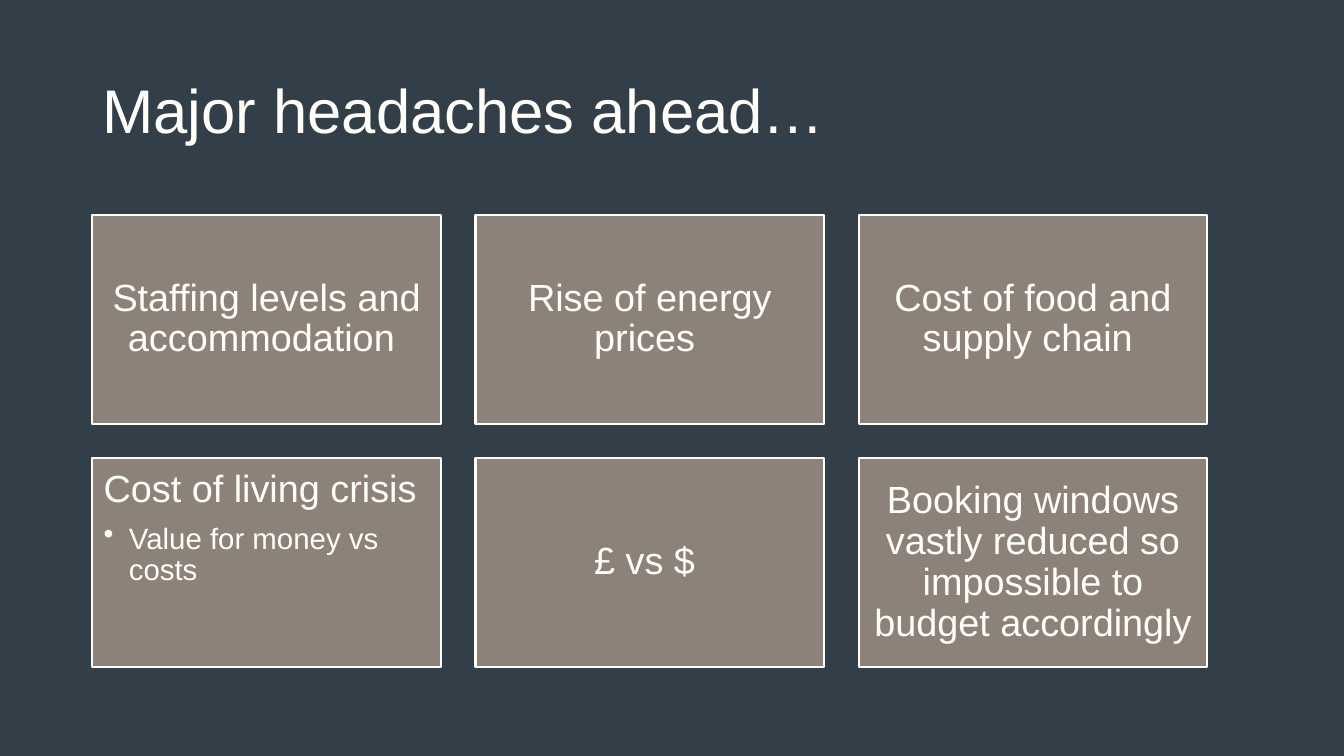
"""Build the slide on major headaches ahead: a title above a grid of six cards."""
from lxml.etree import SubElement
from pptx import Presentation
from pptx.dml.color import RGBColor
from pptx.enum.shapes import MSO_SHAPE
from pptx.enum.text import MSO_ANCHOR, PP_ALIGN
from pptx.oxml.ns import qn
from pptx.util import Pt

COLORS = {"background": "333F48", "card": "8C8279", "text": "FFFDF8"}
CARDS = [
    ["Staffing levels and accommodation "],
    ["Rise of energy prices "],
    ["Cost of food and supply chain "],
    ["Cost of living crisis", "Value for money vs costs"],
    ["£ vs $ "],
    ["Booking windows vastly reduced so impossible to budget accordingly "],
]
COLUMNS = 3
LEFT, TOP = 66, 153.4
CARD_W, CARD_H, GAP = 249, 149.2, 24.7


def style(p, size, align):
    p.alignment = align
    p.line_spacing = 0.9
    for r in p.runs:
        r.font.size = Pt(size)
        r.font.name = "Arial"
        r.font.color.rgb = RGBColor.from_string(COLORS["text"])


prs = Presentation()
prs.slide_width, prs.slide_height = Pt(960), Pt(540)
s = prs.slides.add_slide(prs.slide_layouts[6])
s.background.fill.solid()
s.background.fill.fore_color.rgb = RGBColor.from_string(COLORS["background"])

title = s.shapes.add_textbox(Pt(LEFT), Pt(28.8), Pt(796), Pt(104.4))
tf = title.text_frame
tf.word_wrap = True
tf.vertical_anchor = MSO_ANCHOR.MIDDLE
tf.text = "Major headaches ahead…"
style(tf.paragraphs[0], 44, PP_ALIGN.LEFT)

for i, lines in enumerate(CARDS):
    row, col = divmod(i, COLUMNS)
    x, y = LEFT + col * (CARD_W + GAP), TOP + row * (CARD_H + GAP)
    sp = s.shapes.add_shape(MSO_SHAPE.RECTANGLE, Pt(x), Pt(y), Pt(CARD_W), Pt(CARD_H))
    sp.shadow.inherit = False
    sp.fill.solid()
    sp.fill.fore_color.rgb = RGBColor.from_string(COLORS["card"])
    sp.line.color.rgb = RGBColor.from_string(COLORS["text"])
    sp.line.width = Pt(1.5)

    has_bullets = len(lines) > 1
    align = PP_ALIGN.LEFT if has_bullets else PP_ALIGN.CENTER
    tf = sp.text_frame
    tf.word_wrap = True
    tf.margin_left = tf.margin_right = tf.margin_top = tf.margin_bottom = Pt(8.1)
    tf.vertical_anchor = MSO_ANCHOR.TOP if has_bullets else MSO_ANCHOR.MIDDLE
    tf.text = lines[0]
    style(tf.paragraphs[0], 27, align)
    if has_bullets:
        tf.paragraphs[0].space_after = Pt(9.5)
    for line in lines[1:]:
        p = tf.add_paragraph()
        p.text = line
        p.level = 1
        pPr = p._p.get_or_add_pPr()
        pPr.set("marL", str(Pt(18)))
        pPr.set("indent", str(-Pt(18)))
        SubElement(pPr, qn("a:buChar"), char="•")
        style(p, 21, align)

prs.save("out.pptx")
